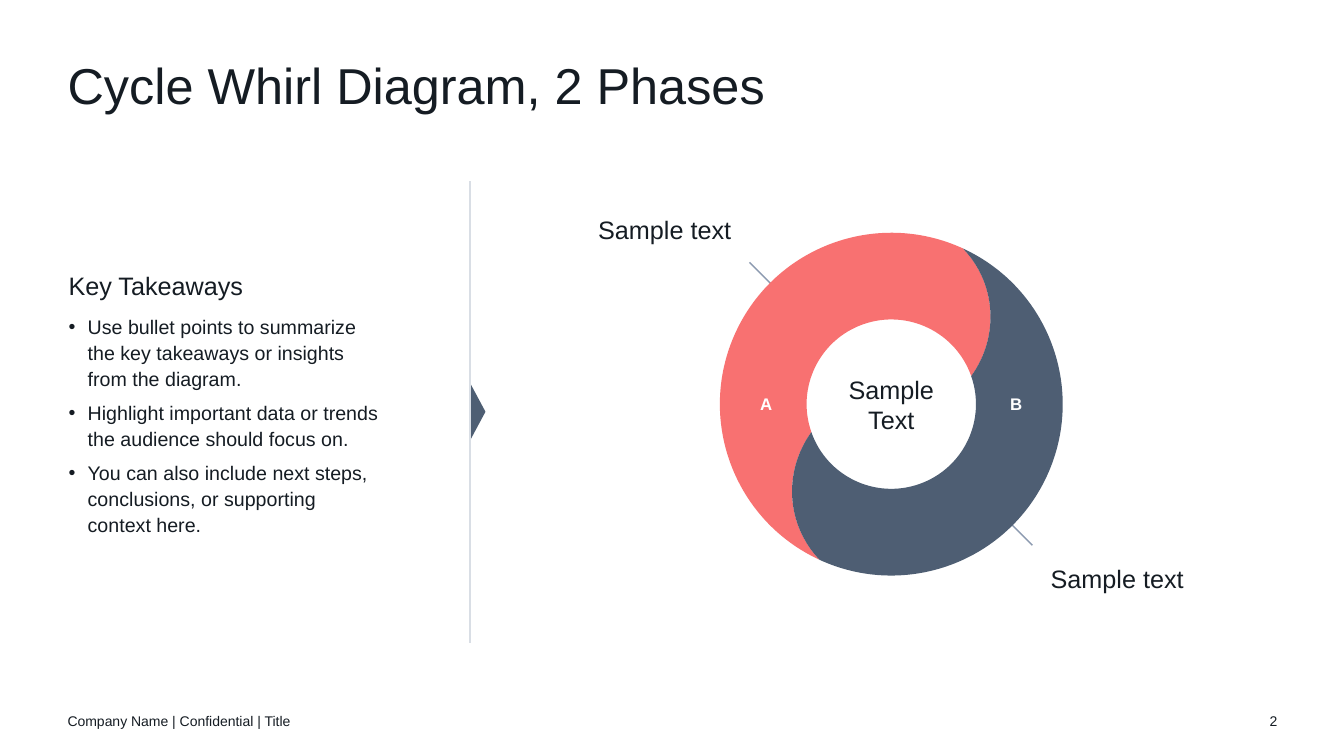
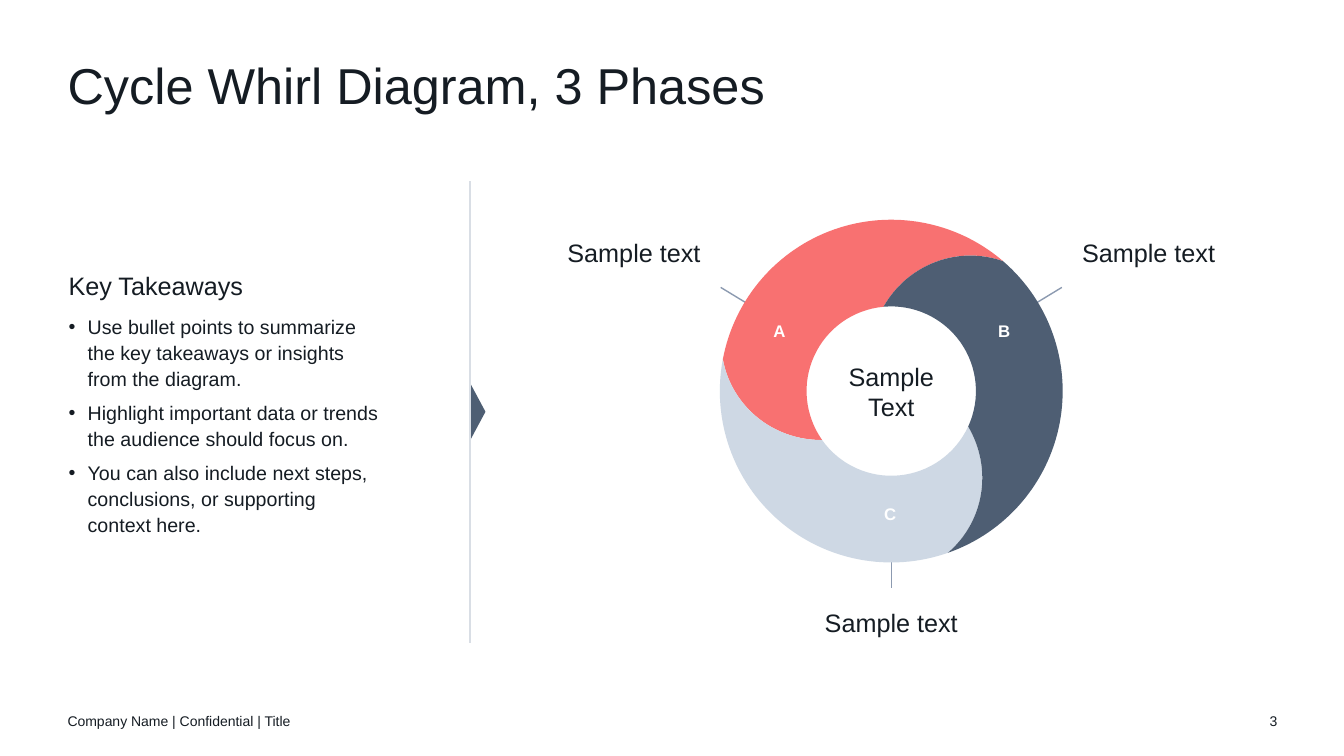
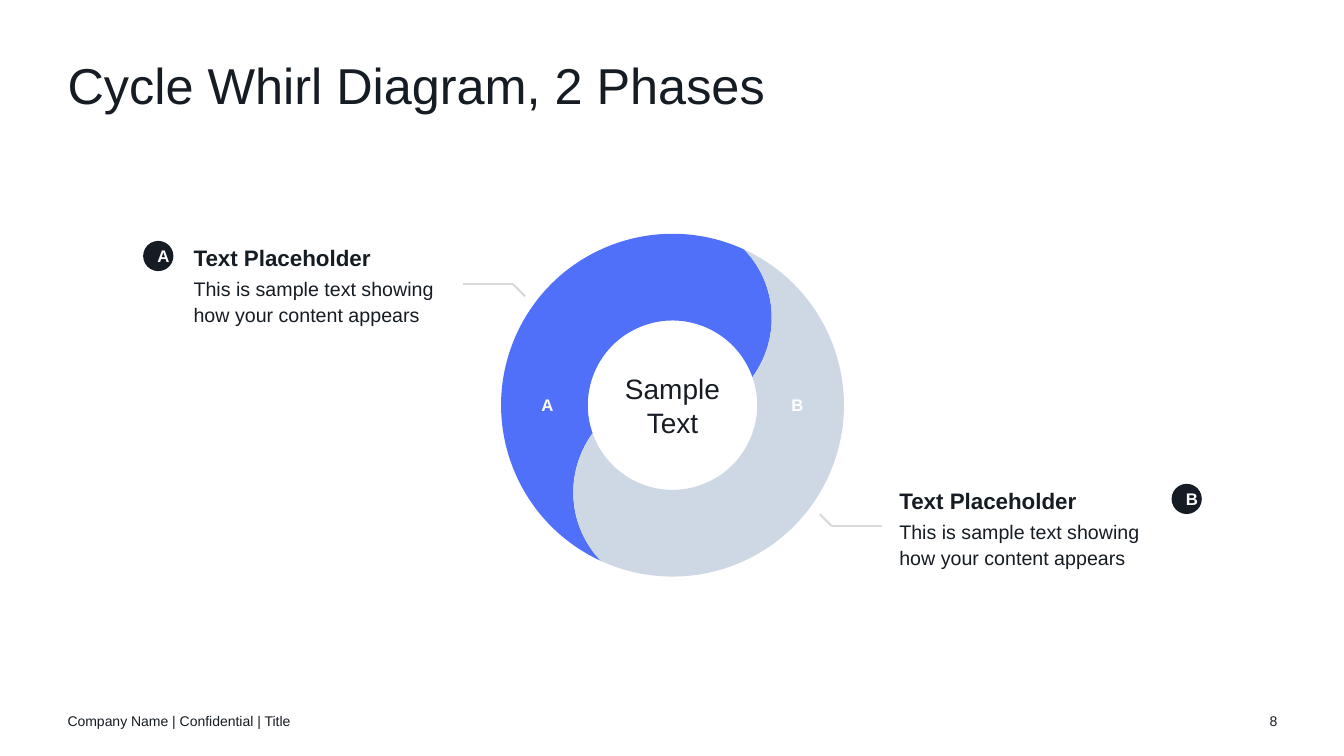
from math import cos, sin, tan, radians

from lxml import etree
from pptx import Presentation
from pptx.dml.color import RGBColor
from pptx.enum.shapes import MSO_CONNECTOR, MSO_SHAPE
from pptx.enum.text import MSO_ANCHOR, MSO_AUTO_SIZE, PP_ALIGN
from pptx.oxml.ns import qn
from pptx.util import Inches, Pt

LEFT, MID, RIGHT = PP_ALIGN.LEFT, PP_ALIGN.CENTER, PP_ALIGN.RIGHT
TOP, CENTER, BOTTOM = MSO_ANCHOR.TOP, MSO_ANCHOR.MIDDLE, MSO_ANCHOR.BOTTOM
FONT = "Arial"
COLORS = {
    "ink": "151C23", "white": "FFFFFF", "slate": "4E5E73", "coral": "F87171",
    "mist": "CED8E4", "blue": "5070FA", "leader": "8C9AB0", "rule": "D9DEE5",
    "callout": "D9D9D9",
}

FOOTER = "Company Name | Confidential | Title"
HEADING = "Key Takeaways"
BULLETS = [
    "Use bullet points to summarize the key takeaways or insights from the diagram.",
    "Highlight important data or trends the audience should focus on.",
    "You can also include next steps, conclusions, or supporting context here.",
]
HUB = "Sample Text"
LABEL = "Sample text"
NOTE = ("Text Placeholder", "This is sample text showing how your content appears")

# Angles are in degrees, counterclockwise from three o'clock.
# A phase is (letter, colour, letter offset, leader as angle and two radii).
# "start" is where phase A begins on the rim; "spin" is the way the edges curl;
# "tilt" is the clockwise rotation of the phase shapes.
SLIDES = [
    {"title": "Cycle Whirl Diagram, 2 Phases", "page": 2, "at": (8.84, 4.01),
     "start": 65.3, "spin": -1, "tilt": 0, "hub": 18, "gap": 0.18, "panel": True,
     "phases": [("A", "coral", (-1.24, 0), (135, 1.33, 1.99)),
                ("B", "slate", (1.24, 0), (315, 1.33, 1.98))]},
    {"title": "Cycle Whirl Diagram, 3 Phases", "page": 3, "at": (8.84, 3.88),
     "start": 49.3, "spin": 1, "tilt": 5.1, "hub": 18, "gap": 0.2, "panel": True,
     "phases": [("A", "coral", (-1.11, -0.6), (148.7, 1.33, 1.98)),
                ("C", "mist", (-0.01, 1.22), (270, 1.47, 1.95)),
                ("B", "slate", (1.12, -0.6), (31.3, 1.33, 1.98))]},
    {"title": "Cycle Whirl Diagram, 2 Phases", "page": 8, "at": (6.67, 4.02),
     "start": 65.3, "spin": -1, "tilt": 0, "hub": 20, "gap": 0, "panel": False,
     "phases": [("A", "blue", (-1.24, 0), None), ("B", "mist", (1.24, 0), None)]},
]
# Letter, left of badge, left of text, top of both, side of the wheel
NOTES = [("A", 1.42, 1.92, 2.39, -1), ("B", 11.62, 8.92, 4.8, 1)]

RIM, HOLE = 1.7, 0.84
EDGE = [(0, RIM), (16.2, 1.59), (33.3, 1.27), (46, HOLE)]
ELBOW = [(2.08, 1.2), (1.58, 1.2), (1.46, 1.08)]
STEPS = 40


def rgb(name):
    return RGBColor.from_string(COLORS[name])


def polar(at, angle, reach):
    turn = radians(angle)
    return at[0] + reach * cos(turn), at[1] - reach * sin(turn)


def write(frame, paras, anchor=CENTER, inset=0):
    """Fill a frame with (text, font values, colour, paragraph values)."""
    frame.word_wrap = True
    frame.auto_size = MSO_AUTO_SIZE.NONE
    frame.vertical_anchor = anchor
    if inset is not None:
        for side in ("left", "top", "right", "bottom"):
            setattr(frame, f"margin_{side}", Inches(inset))
    for i, (words, font, color, form) in enumerate(paras):
        para = frame.add_paragraph() if i else frame.paragraphs[0]
        run = para.add_run()
        run.text = words
        run.font.name = FONT
        run.font.color.rgb = rgb(color)
        for key, value in font.items():
            setattr(run.font, key, value)
        for key, value in form.items():
            setattr(para, key, value)


def style(size, bold=False):
    return {"size": Pt(size), "bold": bold}


def add_text(slide, box, paras, anchor=CENTER):
    frame = slide.shapes.add_textbox(*map(Inches, box)).text_frame
    write(frame, paras, anchor)
    return frame


def add_line(slide, start, end, color):
    line = slide.shapes.add_connector(
        MSO_CONNECTOR.STRAIGHT, *map(Inches, (*start, *end)))
    line.line.color.rgb = rgb(color)
    line.line.width = Pt(1)
    etree.SubElement(line._element.spPr, qn("a:effectLst"))


def paint(shape, color):
    shape.shadow.inherit = False
    shape.fill.solid()
    shape.fill.fore_color.rgb = rgb(color)
    shape.line.fill.background()


def outline(slide, points, close):
    spots = [(Inches(x), Inches(y)) for x, y in points]
    form = slide.shapes.build_freeform(*spots[0], scale=1.0)
    form.add_line_segments(spots[1:], close=close)
    return form.convert_to_shape()


def edge(at, start, spin):
    """Four curve points of the curl from rim to hole."""
    return [polar(at, start + spin * turn, reach) for turn, reach in EDGE]


def arc(at, start, end, reach):
    """Two curves that make a circular arc."""
    half = (end - start) / 2
    pull = 4 / 3 * tan(radians(half) / 4)
    curves = []
    for a in (start, start + half):
        b = a + half
        p, q = polar(at, a, reach), polar(at, b, reach)
        curves.append([
            p, (p[0] - pull * (at[1] - p[1]), p[1] - pull * (p[0] - at[0])),
            (q[0] + pull * (at[1] - q[1]), q[1] + pull * (q[0] - at[0])), q])
    return curves


def sample(curve):
    for i in range(STEPS):
        t = i / STEPS
        mix = ((1 - t) ** 3, 3 * t * (1 - t) ** 2, 3 * t * t * (1 - t), t ** 3)
        yield tuple(sum(m * p[k] for m, p in zip(mix, curve)) for k in (0, 1))


def add_curves(slide, curves):
    """Freeform sized by sampled points, then drawn with true curves."""
    shape = outline(slide, [p for curve in curves for p in sample(curve)], True)
    trace = shape._element.spPr.find(".//" + qn("a:path"))
    for step in list(trace)[1:]:
        trace.remove(step)
    for curve in curves:
        bend = etree.SubElement(trace, qn("a:cubicBezTo"))
        for x, y in curve[1:]:
            spot = etree.SubElement(bend, qn("a:pt"))
            spot.set("x", str(Inches(x) - shape.left))
            spot.set("y", str(Inches(y) - shape.top))
    etree.SubElement(trace, qn("a:close"))
    return shape


def tilt(shape, at, angle):
    """Rotate a shape clockwise about the wheel's centre."""
    hub = [Inches(v) for v in at]
    dx = shape.left + shape.width / 2 - hub[0]
    dy = shape.top + shape.height / 2 - hub[1]
    c, s = cos(radians(angle)), sin(radians(angle))
    shape.left = round(hub[0] + dx * c - dy * s - shape.width / 2)
    shape.top = round(hub[1] + dx * s + dy * c - shape.height / 2)
    shape.rotation = angle


def add_phase(slide, data, start, end, color):
    at, spin = data["at"], data["spin"]
    start, end = start + data["tilt"], end + data["tilt"]
    curl = spin * EDGE[-1][0]
    shape = add_curves(slide, [
        *arc(at, start, end, RIM), edge(at, end, spin),
        *arc(at, end + curl, start + curl, HOLE), edge(at, start, spin)[::-1]])
    paint(shape, color)
    if data["tilt"]:
        tilt(shape, at, data["tilt"])


def add_label(slide, at, gap, leader):
    """Leader behind the wheel, with its label beyond the tip."""
    angle, near, far = leader
    tip = polar(at, angle, far)
    add_line(slide, polar(at, angle, near), tip, "leader")
    wide, tall = 1.85, 0.3
    across = round(cos(radians(angle)), 2)
    if across == 0:
        left, align = tip[0] - wide / 2, MID
    elif across < 0:
        left, align = tip[0] - gap - wide, RIGHT
    else:
        left, align = tip[0] + gap, LEFT
    above = tip[1] < at[1]
    top = tip[1] - gap - tall if above else tip[1] + gap
    add_text(slide, (left, top, wide, tall),
             [(LABEL, style(18), "ink", {"alignment": align})],
             BOTTOM if above else TOP)


def add_wheel(slide, data):
    at, phases = data["at"], data["phases"]
    for *_, leader in phases:
        if leader:
            add_label(slide, at, data["gap"], leader)
    span = 360 / len(phases)
    for i, (_, color, *_) in enumerate(phases):
        start = data["start"] + i * span
        add_phase(slide, data, start, start + span, color)
    for letter, _, (dx, dy), _ in phases:
        add_text(slide, (at[0] + dx - 0.15, at[1] + dy - 0.15, 0.3, 0.3),
                 [(letter, style(12, True), "white", {"alignment": MID})])
    add_text(slide, (at[0] - 0.6, at[1] - 0.6, 1.2, 1.2),
             [(HUB, style(data["hub"]), "ink", {"alignment": MID})])


def add_panel(slide):
    """Key takeaways with the divider and its pointer."""
    mark = slide.shapes.add_shape(MSO_SHAPE.ISOSCELES_TRIANGLE,
                                  *map(Inches, (4.46, 4.01, 0.56, 0.15)))
    mark.rotation = 90
    paint(mark, "slate")
    add_line(slide, (4.66, 1.8), (4.66, 6.38), "rule")
    form = {"line_spacing": 1.1, "space_before": Pt(6)}
    paras = [(HEADING, style(18), "ink", {**form, "space_after": Pt(3)})]
    paras += [(words, style(14), "ink", form) for words in BULLETS]
    frame = add_text(slide, (0.68, 2.05, 3.1, 3.87), paras)
    for para in frame.paragraphs[1:]:
        props = para._p.get_or_add_pPr()
        props.set("marL", str(Inches(0.19)))
        props.set("indent", str(-Inches(0.19)))
        etree.SubElement(props, qn("a:buFont")).set("typeface", FONT)
        etree.SubElement(props, qn("a:buChar")).set("char", "•")


def add_notes(slide, at):
    form = {"line_spacing": 1.1, "space_after": Pt(3)}
    head, body = NOTE
    for letter, badge, left, top, side in NOTES:
        points = [(at[0] + side * x, at[1] + side * y) for x, y in ELBOW]
        for pair in zip(points, points[1:]):
            part = outline(slide, pair, False)
            part.shadow.inherit = False
            part.fill.background()
            part.line.color.rgb = rgb("callout")
            part.line.width = Pt(1.5)
        add_text(slide, (left, top, 2.5, 0.85),
                 [(head, style(16, True), "ink", form),
                  (body, style(14), "ink", form)])
        dot = slide.shapes.add_shape(MSO_SHAPE.OVAL,
                                     *map(Inches, (badge, top, 0.3, 0.3)))
        paint(dot, "ink")
        write(dot.text_frame,
              [(letter, style(12, True), "white", {"alignment": MID})], inset=None)


def add_base(deck, data):
    """New slide with title, footer and page number."""
    slide = deck.slides.add_slide(deck.slide_layouts[5])
    title = slide.shapes.title
    box = (0.67, 0.6, 12, 0.6)
    for key, value in zip(("left", "top", "width", "height"), box):
        setattr(title, key, Inches(value))
    write(title.text_frame, [(data["title"], style(36), "ink",
                              {"alignment": LEFT, "line_spacing": 0.9})], TOP)
    for left, wide, words, align in ((0.67, 4.5, FOOTER, LEFT),
                                     (12.17, 0.5, str(data["page"]), RIGHT)):
        add_text(slide, (left, 6.95, wide, 0.4),
                 [(words, style(10), "ink", {"alignment": align})])
    return slide


def main():
    deck = Presentation()
    deck.slide_width, deck.slide_height = Inches(13.33), Inches(7.5)
    for data in SLIDES:
        slide = add_base(deck, data)
        add_wheel(slide, data)
        if data["panel"]:
            add_panel(slide)
        else:
            add_notes(slide, data["at"])
    deck.save("out.pptx")


if __name__ == "__main__":
    main()
